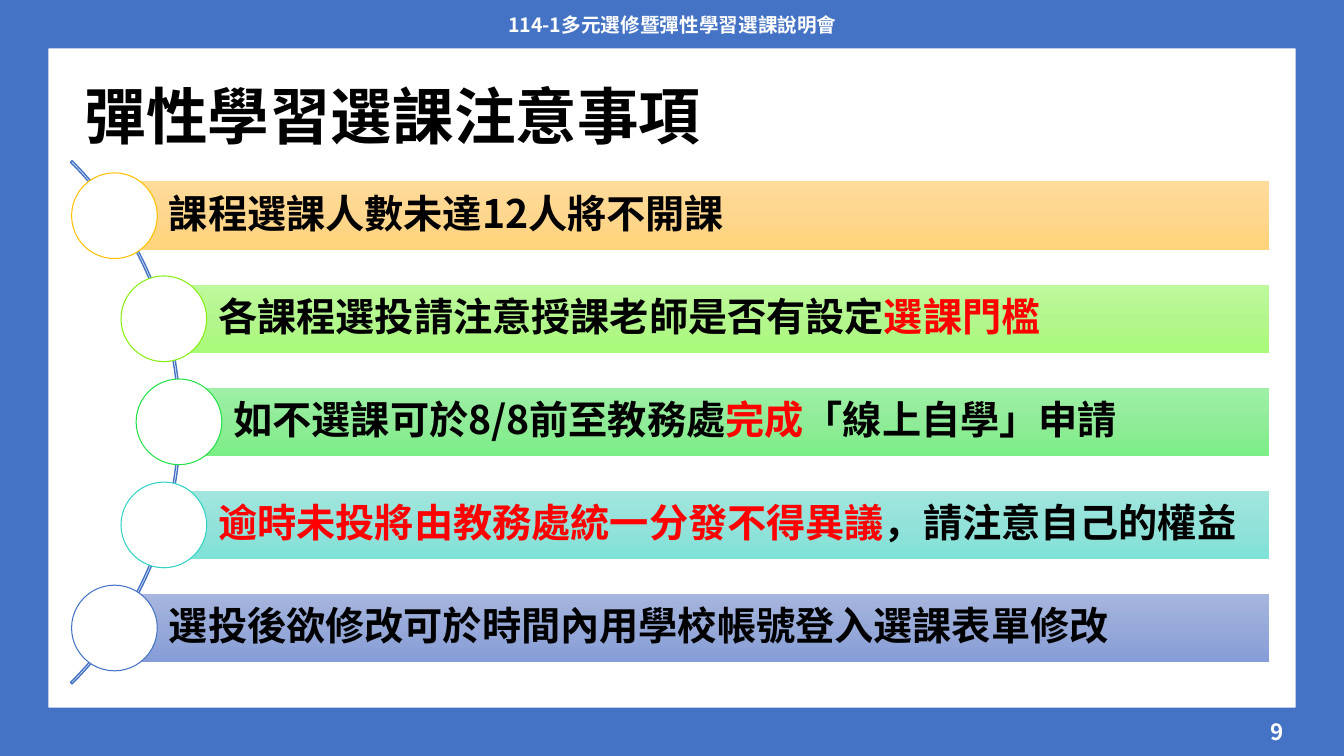
from copy import deepcopy

from pptx import Presentation
from pptx.dml.color import RGBColor
from pptx.enum import shapes, text
from pptx.oxml import ns
from pptx.oxml.xmlchemy import OxmlElement
from pptx.util import Inches, Pt

FONT = "Noto Sans CJK TC"
WHITE = RGBColor(0xFF, 0xFF, 0xFF)
BLACK = RGBColor(0, 0, 0)
RED = RGBColor(0xFF, 0, 0)
BLUE = RGBColor(0x44, 0x72, 0xC4)
ORANGE = RGBColor(0xFF, 0xC0, 0x00)
LIME = RGBColor(0x85, 0xF0, 0x10)
GREEN = RGBColor(0x21, 0xE1, 0x46)
TEAL = RGBColor(0x31, 0xD2, 0xC5)
ORANGE_BAR = [RGBColor(0xFF, 0xDC, 0x9B), RGBColor(0xFF, 0xD6, 0x8D), RGBColor(0xFF, 0xD4, 0x78)]
LIME_BAR = [RGBColor(0xBE, 0xF9, 0x9C), RGBColor(0xB4, 0xF6, 0x8E), RGBColor(0xA9, 0xFA, 0x79)]
GREEN_BAR = [RGBColor(0x9E, 0xF0, 0xA6), RGBColor(0x90, 0xEC, 0x98), RGBColor(0x7B, 0xEE, 0x86)]
TEAL_BAR = [RGBColor(0xA1, 0xE6, 0xDF), RGBColor(0x93, 0xE2, 0xD9), RGBColor(0x7F, 0xE2, 0xD7)]
BLUE_BAR = [RGBColor(0xA6, 0xB6, 0xDE), RGBColor(0x97, 0xA9, 0xD8), RGBColor(0x85, 0x9C, 0xD6)]

# Circle left, circle outline, bar gradient, text runs
NOTES = [
    (0.71, ORANGE, ORANGE_BAR, [("課程選課人數未達12人將不開課", BLACK)]),
    (1.2, LIME, LIME_BAR, [("各課程選投請注意授課老師是否有設定", BLACK), ("選課門檻", RED)]),
    (1.35, GREEN, GREEN_BAR, [("如不選課可於8/8前至教務處", BLACK), ("完成", RED),
                              ("「線上自學」申請", BLACK)]),
    (1.2, TEAL, TEAL_BAR, [("逾時未投將由教務處統一分發不得異議", RED),
                           ("，請注意自己的權益", BLACK)]),
    (0.71, BLUE, BLUE_BAR, [("選投後欲修改可於時間內用學校帳號登入選課表單修改", BLACK)]),
]
BAR_TOP, BAR_H, BAR_RIGHT = 1.8, 0.68, 12.59
PITCH = (5.89 - BAR_TOP) / (len(NOTES) - 1)
CIRCLE = 0.85


def write(tf, runs, size, align=text.PP_ALIGN.LEFT, spacing=1.0, margins=(0.1, 0.05, 0.1, 0.05)):
    """Fill a text frame with one bold paragraph made of (text, colour) runs."""
    tf.word_wrap = True
    tf.vertical_anchor = text.MSO_ANCHOR.MIDDLE
    tf.margin_left, tf.margin_top, tf.margin_right, tf.margin_bottom = map(Inches, margins)
    p = tf.paragraphs[0]
    p.alignment = align
    p.line_spacing = spacing
    for words, color in runs:
        r = p.add_run()
        r.text = words
        r.font.size = Pt(size)
        r.font.bold = True
        r.font.name = FONT
        r.font.color.rgb = color
        ea = OxmlElement("a:ea")
        ea.set("typeface", FONT)
        r.font._element.append(ea)


class Deck:
    def __init__(self, prs):
        self.slide = prs.slides.add_slide(prs.slide_layouts[6])

    def shape(self, kind, box, fill=None, line=None, width=0.75, adj=()):
        sp = self.slide.shapes.add_shape(kind, *map(Inches, box))
        sp.shadow.inherit = False
        for i, value in enumerate(adj):
            sp.adjustments[i] = value
        if fill is None:
            sp.fill.background()
        else:
            sp.fill.solid()
            sp.fill.fore_color.rgb = fill
        if line is None:
            sp.line.fill.background()
        else:
            sp.line.color.rgb = line
            sp.line.width = Pt(width)
        return sp

    def label(self, box, words, size, color, **fmt):
        sp = self.slide.shapes.add_textbox(*map(Inches, box))
        write(sp.text_frame, [(words, color)], size, **fmt)

    def bar(self, box, colors, runs):
        """Rectangle with a top-to-bottom three-stop gradient and its text."""
        sp = self.shape(shapes.MSO_SHAPE.RECTANGLE, box)
        sp.fill.gradient()
        sp.fill.gradient_angle = 270
        stops = sp._element.spPr.find(ns.qn("a:gradFill")).find(ns.qn("a:gsLst"))
        stops.append(deepcopy(stops[-1]))
        for i, (stop, color) in enumerate(zip(sp.fill.gradient_stops, colors)):
            stop.position = i / 2
            stop.color.rgb = color
        write(sp.text_frame, runs, 28, spacing=0.9, margins=(0.54, 0.08, 0.08, 0.08))

    def circle(self, left, top, color):
        self.shape(shapes.MSO_SHAPE.OVAL, (left, top, CIRCLE, CIRCLE), WHITE, color)


def main():
    prs = Presentation()
    prs.slide_width, prs.slide_height = Inches(13.33), Inches(7.5)
    s = Deck(prs)
    s.shape(shapes.MSO_SHAPE.FRAME, (0, 0, 13.33, 7.5), BLUE, adj=[0.064])
    s.label((0.74, 0.6, 11.8, 1.18), "彈性學習選課注意事項", 44, BLACK, spacing=0.9)
    s.shape(shapes.MSO_SHAPE.BLOCK_ARC, (-5.55, 0.52, 7.34, 7.34),
            line=BLUE, width=1, adj=[189, 27, 0.003])
    for i, (left, color, gradient, runs) in enumerate(NOTES):
        top = BAR_TOP + i * PITCH
        bar_left = left + CIRCLE / 2
        s.bar((bar_left, top, BAR_RIGHT - bar_left, BAR_H), gradient, runs)
        s.circle(left, top - (CIRCLE - BAR_H) / 2, color)
    s.label((4.42, 0.04, 4.5, 0.4), "114-1多元選修暨彈性學習選課說明會", 14, WHITE,
            align=text.PP_ALIGN.CENTER)
    s.label((9.83, 7.06, 3, 0.4), "9", 16, WHITE, align=text.PP_ALIGN.RIGHT)
    prs.save("out.pptx")


if __name__ == "__main__":
    main()
